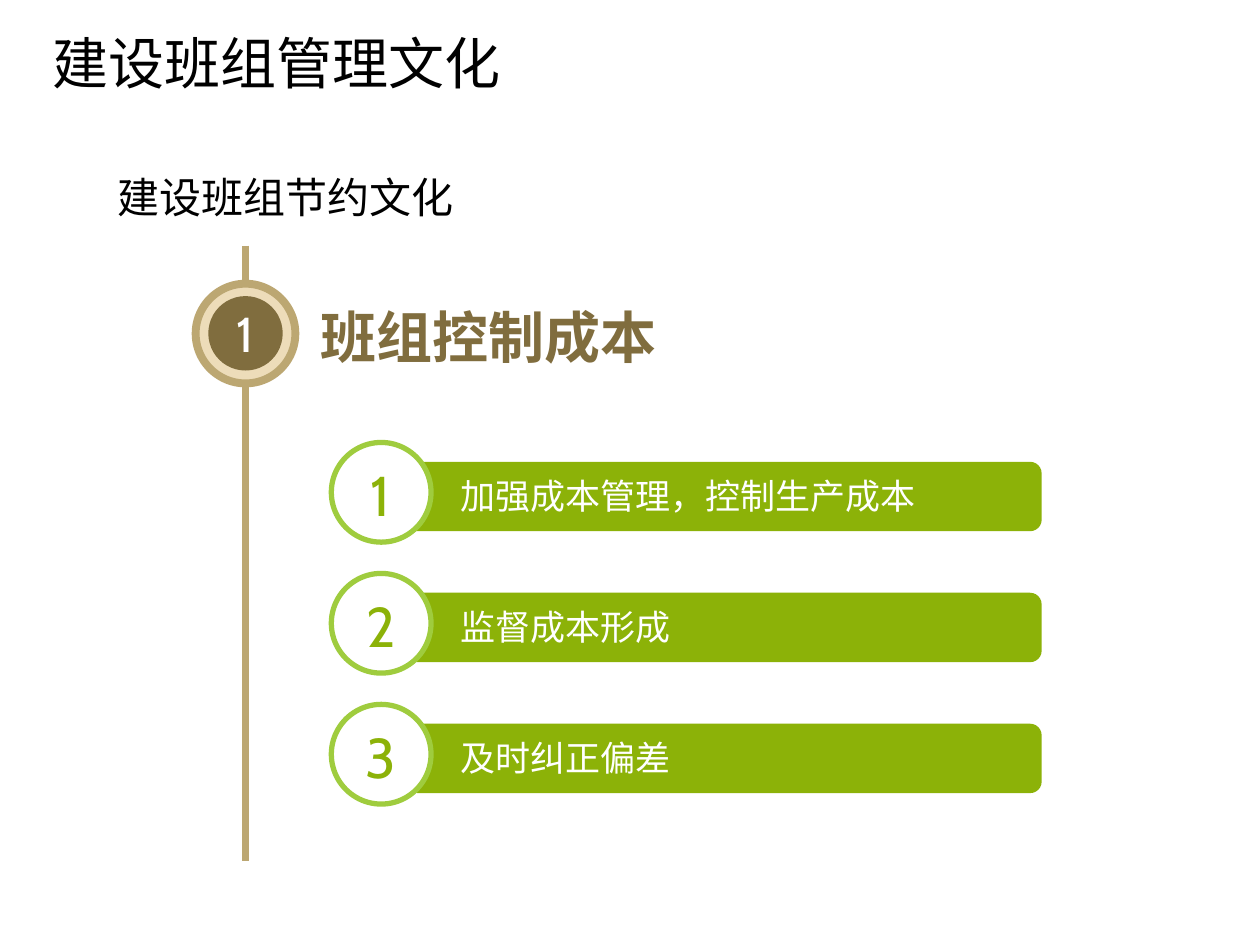
"""Build the slide on cost control within a work team's culture of thrift."""
from dataclasses import dataclass
from typing import Optional

from lxml import etree
from pptx import Presentation
from pptx.dml.color import RGBColor
from pptx.enum import shapes, text
from pptx.oxml import ns
from pptx.util import Cm, Pt

BLACK = RGBColor(0x00, 0x00, 0x00)
WHITE = RGBColor(0xFF, 0xFF, 0xFF)
TAN = RGBColor(0xBC, 0xA7, 0x72)
CREAM = RGBColor(0xED, 0xDC, 0xB9)
BROWN = RGBColor(0x80, 0x6D, 0x3E)
GREEN = RGBColor(0x8C, 0xB2, 0x08)
LIME = RGBColor(0x9F, 0xCC, 0x3E)

HAN, CALIBRI, CABIN = "Noto Sans CJK SC", "Calibri", "Cabin"
RING, DISC = 2.01, 1.5
AXIS_X = 4.95
FIRST_TOP, PITCH = 8.92, 2.64
MEASURES = ["加强成本管理，控制生产成本", "监督成本形成", "及时纠正偏差"]


@dataclass(frozen=True)
class Box:
    """Place and size in centimetres."""
    left: float
    top: float
    width: float
    height: float

    def emu(self) -> tuple:
        """Return the four lengths for python-pptx."""
        return Cm(self.left), Cm(self.top), Cm(self.width), Cm(self.height)


@dataclass(frozen=True)
class Style:
    """Look of one run of text."""
    font: str
    size: float
    color: RGBColor
    bold: bool = False


def write(frame, words: str, style: Style, **layout) -> None:
    """Put one styled paragraph in a text frame."""
    for name, value in layout.items():
        setattr(frame, name, value)
    run = frame.paragraphs[0].add_run()
    run.text = words
    formats = {"name": style.font, "size": Pt(style.size), "bold": style.bold}
    for name, value in formats.items():
        setattr(run.font, name, value)
    run.font.color.rgb = style.color
    east_asian = etree.SubElement(run.font._element, ns.qn("a:ea"))
    east_asian.set("typeface", HAN)


def place(placeholder, box: Box) -> None:
    """Move a placeholder."""
    for name, value in zip(("left", "top", "width", "height"), box.emu()):
        setattr(placeholder, name, value)


def add_form(parent, kind, box: Box, fill: Optional[RGBColor] = None,
             line: Optional[RGBColor] = None, weight: float = 0):
    """Draw a flat preset shape."""
    form = parent.add_shape(kind, *box.emu())
    form.shadow.inherit = False
    if fill is None:
        form.fill.background()
    else:
        form.fill.solid()
        form.fill.fore_color.rgb = fill
    if line is None:
        form.line.fill.background()
    else:
        form.line.color.rgb = line
        form.line.width = Pt(weight)
    return form


def add_number(parent, box: Box, number: int, style: Style,
               fill: Optional[RGBColor] = None) -> None:
    """Draw a disc with a centred number."""
    disc = add_form(parent, shapes.MSO_SHAPE.OVAL, box, fill)
    margins = {f"margin_{side}": 0 for side in ("left", "top", "right", "bottom")}
    write(disc.text_frame, str(number), style,
          vertical_anchor=text.MSO_ANCHOR.MIDDLE, **margins)
    disc.text_frame.paragraphs[0].alignment = text.PP_ALIGN.CENTER


def add_label(parent, box: Box, words: str, style: Style) -> None:
    """Add a wrapping text box."""
    label = parent.add_textbox(*box.emu())
    write(label.text_frame, words, style, word_wrap=True,
          auto_size=text.MSO_AUTO_SIZE.SHAPE_TO_FIT_TEXT)


def add_axis(parent) -> None:
    """Draw the vertical line behind the heading badge."""
    axis = parent.add_connector(shapes.MSO_CONNECTOR.STRAIGHT,
                                Cm(AXIS_X), Cm(4.95), Cm(AXIS_X), Cm(17.35))
    axis.line.color.rgb = TAN
    axis.line.width = Pt(4.5)
    etree.SubElement(axis._element.spPr, ns.qn("a:effectLst"))


def add_measure(parent, number: int, top: float) -> None:
    """Draw the bar and badge of one measure."""
    row = parent.add_group_shape().shapes
    add_form(row, shapes.MSO_SHAPE.ROUNDED_RECTANGLE, Box(8.2, top + 0.39, 12.8, 1.4), GREEN)
    add_form(row, shapes.MSO_SHAPE.OVAL, Box(6.68, top, RING, RING), WHITE, LIME, 3)
    add_number(row, Box(6.93, top + 0.3, DISC, DISC), number, Style(CABIN, 32, GREEN))


def main() -> None:
    """Build and save the slide."""
    deck = Presentation()
    deck.slide_width, deck.slide_height = Cm(25.4), Cm(19.05)
    slide = deck.slides.add_slide(deck.slide_layouts[1])
    title, subtitle = slide.shapes.title, slide.placeholders[1]

    place(title, Box(0, 0, 25.4, 2.49))
    write(title.text_frame, "建设班组管理文化", Style(HAN, 32, BLACK),
          vertical_anchor=text.MSO_ANCHOR.MIDDLE, auto_size=text.MSO_AUTO_SIZE.NONE)
    place(subtitle, Box(2.11, 3.33, 22.8, 1.2))
    write(subtitle.text_frame, "建设班组节约文化", Style(CALIBRI, 24, BLACK),
          vertical_anchor=text.MSO_ANCHOR.TOP, auto_size=text.MSO_AUTO_SIZE.NONE)
    for holder, margin in ((title, 0.81), (subtitle, 0)):
        paragraph = holder.text_frame.paragraphs[0]
        paragraph.alignment = text.PP_ALIGN.LEFT
        paragraph.space_before = Pt(0)
        properties = paragraph._p.get_or_add_pPr()
        properties.set("marL", str(Cm(margin)))
        properties.set("indent", "0")
        etree.SubElement(properties, ns.qn("a:buNone"))

    add_axis(slide.shapes)
    add_form(slide.shapes, shapes.MSO_SHAPE.OVAL,
             Box(AXIS_X - RING / 2, 5.72, RING, RING), CREAM, TAN, 4.5)
    add_number(slide.shapes, Box(AXIS_X - DISC / 2, 5.97, DISC, DISC), 1,
               Style(CABIN, 28, WHITE), BROWN)
    add_label(slide.shapes, Box(6.22, 5.97, 8.33, 1.63), "班组控制成本",
              Style(HAN, 32, BROWN, bold=True))

    tops = [FIRST_TOP + PITCH * index for index in range(len(MEASURES))]
    for number, top in enumerate(tops, 1):
        add_measure(slide.shapes, number, top)
    for words, top in zip(MEASURES, tops):
        add_label(slide.shapes, Box(9.03, top + 0.53, 11.61, 1.12), words,
                  Style(HAN, 20, WHITE))
    deck.save("out.pptx")


if __name__ == "__main__":
    main()
